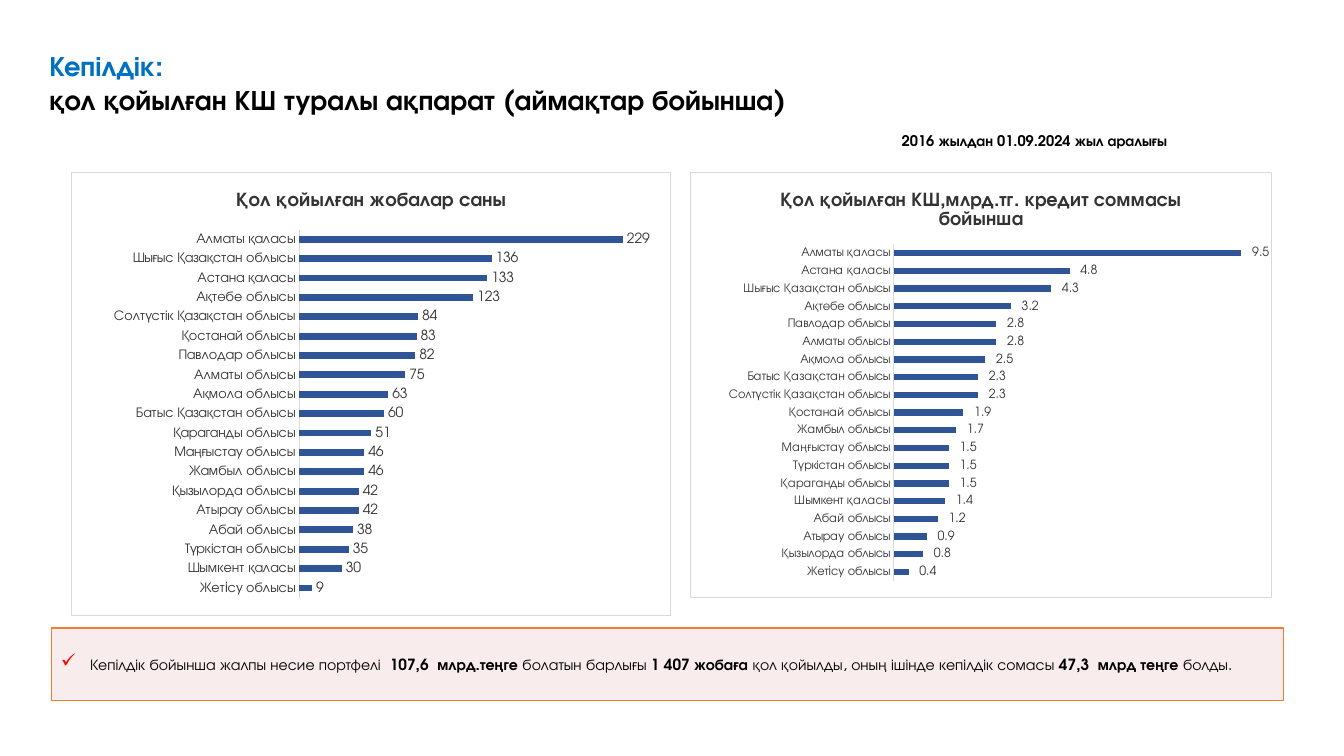
from dataclasses import dataclass

from lxml.etree import SubElement
from pptx import Presentation
from pptx.chart.data import CategoryChartData
from pptx.dml.color import RGBColor
from pptx.enum.chart import XL_CHART_TYPE, XL_LABEL_POSITION, XL_TICK_MARK
from pptx.enum.shapes import MSO_SHAPE
from pptx.enum.text import MSO_ANCHOR, MSO_AUTO_SIZE, PP_ALIGN
from pptx.oxml import parse_xml
from pptx.oxml.ns import nsdecls, qn
from pptx.util import Pt


@dataclass(frozen=True)
class Theme:
    font: str = "TeX Gyre Adventor"
    accent: str = "0070C0"
    ink: str = "000000"
    chart_ink: str = "333333"
    bar: str = "2F5597"
    rule: str = "D9D9D9"
    paper: str = "FFFFFF"
    note_fill: str = "F2DCDB"
    note_line: str = "ED7D31"
    check: str = "FF0000"
    heading_size: float = 20
    chart_title_size: float = 14
    note_size: float = 11
    period_size: float = 10.5


BILLIONS = r"_-* #\ ##0.0_р_._-"

PROJECTS = [
    ("Жетiсу облысы", 9), ("Шымкент қаласы", 30), ("Түркістан облысы", 35),
    ("Абай облысы", 38), ("Атырау облысы", 42), ("Қызылорда облысы", 42),
    ("Жамбыл облысы", 46), ("Маңғыстау облысы", 46), ("Қараганды облысы", 51),
    ("Батыс Қазақстан облысы", 60), ("Ақмола облысы", 63), ("Алматы облысы", 75),
    ("Павлодар облысы", 82), ("Қостанай облысы", 83),
    ("Солтүстік Қазақстан облысы", 84), ("Ақтөбе облысы", 123),
    ("Астана қаласы", 133), ("Шығыс Қазақстан облысы", 136), ("Алматы қаласы", 229),
]
AMOUNTS = [
    ("Жетiсу облысы", 0.4), ("Қызылорда облысы", 0.8), ("Атырау облысы", 0.9),
    ("Абай облысы", 1.2), ("Шымкент қаласы", 1.4), ("Қараганды облысы", 1.5),
    ("Түркістан облысы", 1.5), ("Маңғыстау облысы", 1.5), ("Жамбыл облысы", 1.7),
    ("Қостанай облысы", 1.9), ("Солтүстік Қазақстан облысы", 2.3),
    ("Батыс Қазақстан облысы", 2.3), ("Ақмола облысы", 2.5), ("Алматы облысы", 2.8),
    ("Павлодар облысы", 2.8), ("Ақтөбе облысы", 3.2),
    ("Шығыс Қазақстан облысы", 4.3), ("Астана қаласы", 4.8), ("Алматы қаласы", 9.5),
]
NOTE = [
    ("Кепілдік бойынша жалпы несие портфелі  ", False),
    ("107,6  млрд.теңге ", True),
    ("болатын барлығы ", False),
    ("1 407 жобаға ", True),
    ("қол қойылды, оның ішінде кепілдік сомасы ", False),
    ("47,3  млрд теңге ", True),
    ("болды.", False),
]


class RegionSlide:
    def __init__(self, deck, theme):
        self.theme = theme
        self.slide = deck.slides.add_slide(deck.slide_layouts[5])

    def style(self, font, size, color, bold=False):
        font.name = self.theme.font
        font.size = Pt(size)
        font.bold = bold
        font.color.rgb = RGBColor.from_string(color)

    def heading(self, box, topic, subject):
        title = self.slide.shapes.title
        title.left, title.top, title.width, title.height = map(Pt, box)
        frame = title.text_frame
        frame.text = f"{topic}\v{subject}"
        frame.auto_size = MSO_AUTO_SIZE.NONE
        frame.vertical_anchor = MSO_ANCHOR.TOP
        line = frame.paragraphs[0]
        line.alignment = PP_ALIGN.LEFT
        for run, color in zip(line.runs, (self.theme.accent, self.theme.ink)):
            self.style(run.font, self.theme.heading_size, color, True)

    def period(self, box, text):
        frame = self.slide.shapes.add_textbox(*map(Pt, box)).text_frame
        frame.word_wrap = False
        frame.text = text
        self.style(frame.paragraphs[0].runs[0].font,
                   self.theme.period_size, self.theme.ink, True)

    def note(self, box, parts):
        theme = self.theme
        panel = self.slide.shapes.add_shape(MSO_SHAPE.RECTANGLE, *map(Pt, box))
        panel.shadow.inherit = False
        panel.fill.solid()
        panel.fill.fore_color.rgb = RGBColor.from_string(theme.note_fill)
        tint = panel.fill._xPr.find(".//" + qn("a:srgbClr"))
        SubElement(tint, qn("a:alpha"), val="50000")
        panel.line.color.rgb = RGBColor.from_string(theme.note_line)
        panel.line.width = Pt(1)
        frame = panel.text_frame
        frame.word_wrap = True
        frame.vertical_anchor = MSO_ANCHOR.MIDDLE
        frame.margin_left = frame.margin_right = Pt(6)
        frame.margin_top = frame.margin_bottom = Pt(3)
        sentence = frame.paragraphs[0]
        sentence.alignment = PP_ALIGN.LEFT
        sentence.space_after = Pt(6)
        layout = sentence._p.get_or_add_pPr()
        layout.set("marL", str(Pt(21.5)))
        layout.set("indent", str(Pt(-21)))
        bullet_color = SubElement(layout, qn("a:buClr"))
        SubElement(bullet_color, qn("a:srgbClr"), val=theme.check)
        SubElement(layout, qn("a:buSzPct"), val="125000")
        SubElement(layout, qn("a:buChar"), char="✓")
        for text, bold in parts:
            run = sentence.add_run()
            run.text = text
            self.style(run.font, theme.note_size, theme.ink, bold)

    def bars(self, box, title, regions, plot, top_value, size, number_format):
        theme = self.theme
        data = CategoryChartData(number_format=number_format)
        data.categories = [region for region, _ in regions]
        data.add_series(title, [value for _, value in regions])
        chart = self.slide.shapes.add_chart(
            XL_CHART_TYPE.BAR_CLUSTERED, *map(Pt, box), data).chart
        self.style(chart.font, size, theme.chart_ink)
        chart.has_legend = False
        chart.has_title = True
        chart.chart_title.include_in_layout = False
        caption = chart.chart_title.text_frame
        caption.text = title
        self.style(caption.paragraphs[0].runs[0].font,
                   theme.chart_title_size, theme.chart_ink, True)

        names = chart.category_axis
        names.major_tick_mark = names.minor_tick_mark = XL_TICK_MARK.NONE
        names.format.line.color.rgb = RGBColor.from_string(theme.rule)
        names.format.line.width = Pt(0.75)
        self.style(names.tick_labels.font, size, theme.chart_ink)
        scale = chart.value_axis
        scale.minimum_scale, scale.maximum_scale = 0, top_value
        scale.has_major_gridlines = False
        scale.visible = False

        group = chart.plots[0]
        group.gap_width = 182
        group.vary_by_categories = False
        fill = group.series[0].format.fill
        fill.solid()
        fill.fore_color.rgb = RGBColor.from_string(theme.bar)
        group.has_data_labels = True
        labels = group.data_labels
        labels.show_value = True
        labels.position = XL_LABEL_POSITION.OUTSIDE_END
        labels.number_format = number_format
        labels.number_format_is_linked = False
        self.style(labels.font, size, theme.chart_ink)
        self.frame_chart(chart, plot)

    def frame_chart(self, chart, plot):
        area = chart._chartSpace.chart.plotArea
        for old in area.findall(qn("c:layout")):
            area.remove(old)
        places = "".join(f'<c:{key} val="{value}"/>' for key, value in zip("xywh", plot))
        area.insert(0, parse_xml(
            f'<c:layout {nsdecls("c")}><c:manualLayout><c:layoutTarget val="inner"/>'
            f'<c:xMode val="edge"/><c:yMode val="edge"/>{places}'
            '</c:manualLayout></c:layout>'))
        chart._chartSpace.chart.addnext(parse_xml(
            f'<c:spPr {nsdecls("c", "a")}><a:solidFill><a:srgbClr val="{self.theme.paper}"/>'
            f'</a:solidFill><a:ln w="{Pt(0.75)}"><a:solidFill>'
            f'<a:srgbClr val="{self.theme.rule}"/></a:solidFill></a:ln></c:spPr>'))


def main():
    deck = Presentation()
    deck.slide_width, deck.slide_height = Pt(960), Pt(540)
    page = RegionSlide(deck, Theme())
    page.heading((28, 31, 618, 55.5), "Кепілдік: ",
                 "қол қойылған КШ туралы ақпарат (аймақтар бойынша)")
    page.period((637, 90.5, 217, 20), "2016 жылдан 01.09.2024 жыл аралығы")
    page.note((37, 448.5, 880, 52), NOTE)
    page.bars((51, 122.5, 428.5, 317.5), "Қол қойылған жобалар саны",
              PROJECTS, (0.38, 0.13, 0.59, 0.83), 250, 10, "General")
    page.bars((493, 122.5, 423.5, 305), "Қол қойылған КШ,млрд.тг. кредит соммасы бойынша",
              AMOUNTS, (0.35, 0.17, 0.63, 0.79), 10, 9, BILLIONS)
    deck.save("out.pptx")


if __name__ == "__main__":
    main()
